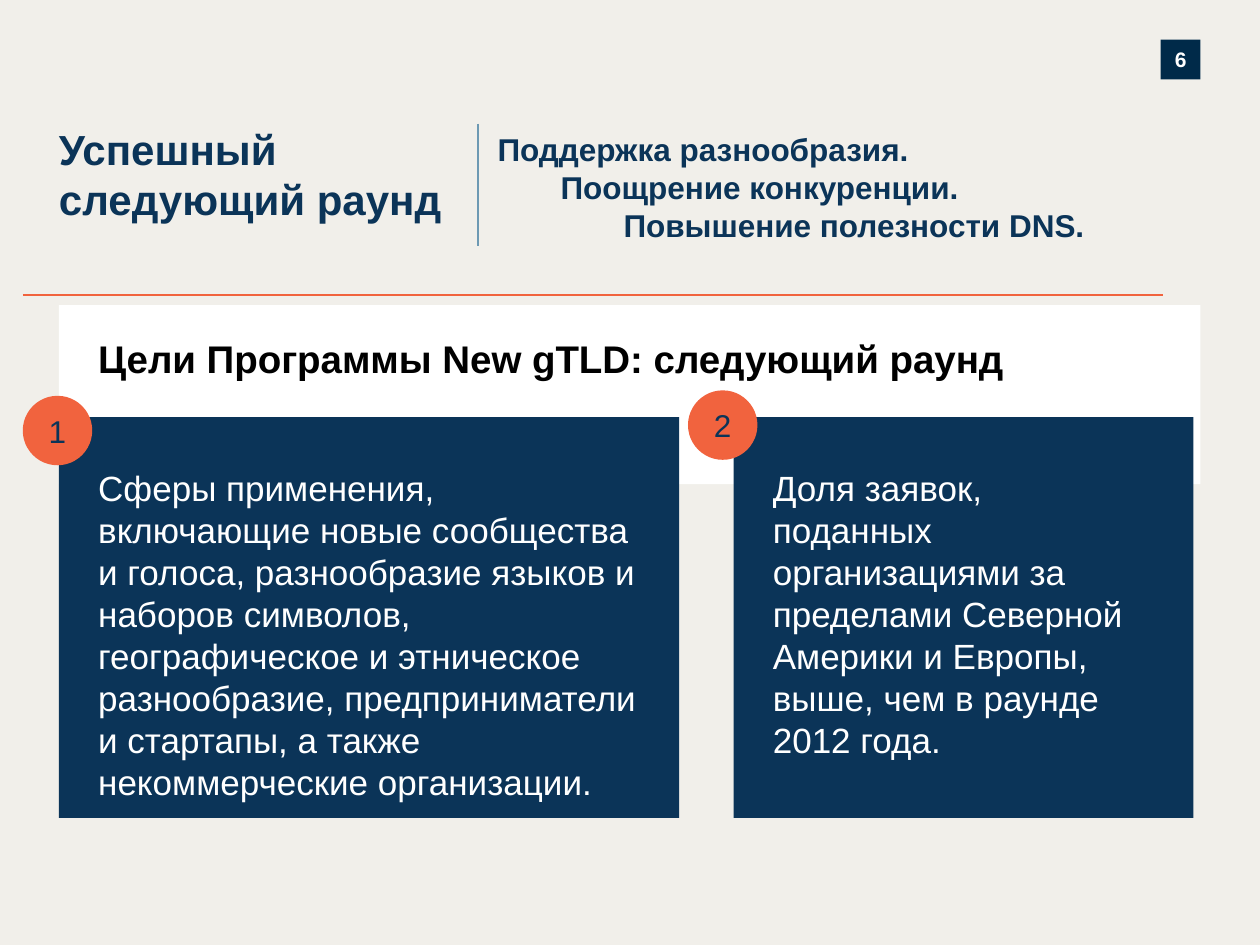
from lxml.etree import SubElement
from pptx import Presentation
from pptx.dml.color import RGBColor
from pptx.enum.shapes import MSO_CONNECTOR, MSO_SHAPE
from pptx.enum.text import MSO_ANCHOR, PP_ALIGN
from pptx.oxml.ns import qn
from pptx.util import Cm, Pt

NAVY, ORANGE, WHITE = "0B3458", "F1633E", "FFFFFF"
LEFT = 1.19
CARD_TOP, CARD_HEIGHT, DISC = 8.41, 8.08, 1.4

TITLE = "Успешный следующий раунд"
# Each motto starts one tab stop further right than the one above.
MOTTOS = ["Поддержка разнообразия.", "Поощрение конкуренции.", "Повышение полезности DNS."]
HEADING = "Цели Программы New gTLD: следующий раунд"
# number, text, card left, card width, right inset, disc left, disc top
GOALS = [
    ("2", "Доля заявок, поданных организациями за пределами Северной Америки и Европы, "
          "выше, чем в раунде 2012 года.", 14.79, 9.27, 1.4, 13.87, 7.87),
    ("1", "Сферы применения, включающие новые сообщества и голоса, разнообразие языков "
          "и наборов символов, географическое и этническое разнообразие, предприниматели "
          "и стартапы, а также некоммерческие организации.", LEFT, 12.5, 0.79, 0.46, 7.98),
]
# colour, start x, start y, end x, end y
RULES = [("6D99B3", 9.63, 2.49, 9.63, 4.95), (ORANGE, 0.46, 5.94, 23.44, 5.94)]


def rgb(color):
    return RGBColor.from_string(color)


def write(s, lines, size, color, bold=False, insets=(0, 0, 0, 0), centred=False):
    """Put lines in a shape; insets are left, top, right, bottom in cm."""
    tf = s.text_frame
    tf.word_wrap = True
    tf.vertical_anchor = MSO_ANCHOR.MIDDLE if centred else MSO_ANCHOR.TOP
    for side, inset in zip(("left", "top", "right", "bottom"), insets):
        setattr(tf, f"margin_{side}", Cm(inset))
    font = {"name": "Arial", "size": Pt(size), "bold": bold}
    for i, line in enumerate(lines):
        p = tf.add_paragraph() if i else tf.paragraphs[0]
        p.alignment = PP_ALIGN.CENTER if centred else PP_ALIGN.LEFT
        r = p.add_run()
        r.text = line
        r.font.color.rgb = rgb(color)
        for key, value in font.items():
            setattr(r.font, key, value)


def add_filled(shapes, kind, box, fill):
    s = shapes.add_shape(kind, *map(Cm, box))
    s.shadow.inherit = False
    s.fill.solid()
    s.fill.fore_color.rgb = rgb(fill)
    s.line.fill.background()
    return s


def add_rule(shapes, color, *ends):
    line = shapes.add_connector(MSO_CONNECTOR.STRAIGHT, *map(Cm, ends))
    line.line.color.rgb = rgb(color)
    line.line.width = Pt(1.25)
    SubElement(line._element.spPr, qn("a:effectLst"))


def main():
    prs = Presentation()
    prs.slide_width, prs.slide_height = Cm(25.4), Cm(19.05)
    slide = prs.slides.add_slide(prs.slide_layouts[6])
    slide.background.fill.solid()
    slide.background.fill.fore_color.rgb = rgb("F1EFEA")
    shapes = slide.shapes

    page = add_filled(shapes, MSO_SHAPE.RECTANGLE, (23.4, 0.8, 0.8, 0.8), "002A49")
    write(page, ["6"], 12, WHITE, bold=True, centred=True)

    panel = add_filled(shapes, MSO_SHAPE.RECTANGLE, (LEFT, 6.15, 23.01, 3.61), WHITE)
    write(panel, [HEADING], 22, "000000", bold=True, insets=(0.79, 0.61, 2, 0.76))

    title = shapes.add_textbox(*map(Cm, (LEFT, 2.49, 9.02, 2.44)))
    write(title, [TITLE], 24, NAVY, bold=True)

    mottos = shapes.add_textbox(*map(Cm, (10.03, 2.62, 14.53, 2.31)))
    write(mottos, ["\t" * i + motto for i, motto in enumerate(MOTTOS)], 18, NAVY, bold=True)

    for number, text, left, width, right_inset, disc_left, disc_top in GOALS:
        card = add_filled(shapes, MSO_SHAPE.RECTANGLE,
                          (left, CARD_TOP, width, CARD_HEIGHT), NAVY)
        write(card, [text], 20, WHITE, insets=(0.79, 0.99, right_inset, 0.77))
        disc = add_filled(shapes, MSO_SHAPE.OVAL, (disc_left, disc_top, DISC, DISC), ORANGE)
        write(disc, [number], 18, NAVY, insets=(0.25, 0.13, 0.25, 0.13), centred=True)

    for rule in RULES:
        add_rule(shapes, *rule)

    prs.save("out.pptx")


if __name__ == "__main__":
    main()
